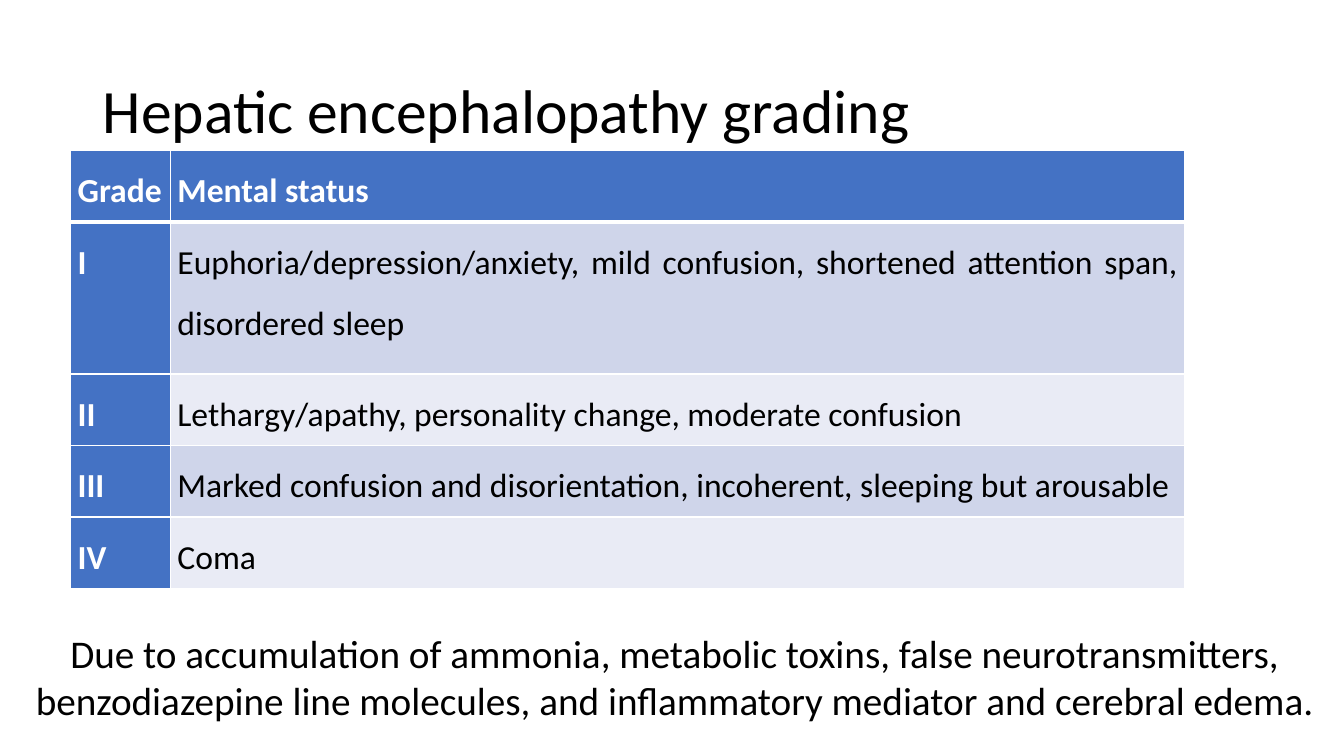
from pptx import Presentation
from pptx.dml.color import RGBColor
from pptx.enum.text import MSO_ANCHOR, PP_ALIGN
from pptx.oxml import parse_xml
from pptx.oxml.ns import nsdecls
from pptx.util import Inches, Pt

COLORS = {
    "white": "FFFFFF",
    "black": "000000",
    "header": "4472C4",
    "band_dark": "CFD5EA",
    "band_light": "E9EBF5",
}
GRADES = [
    ("Grade", "Mental status"),
    ("I", "Euphoria/depression/anxiety, mild confusion, shortened attention span, disordered sleep"),
    ("II", "Lethargy/apathy, personality change, moderate confusion"),
    ("III", "Marked confusion and disorientation, incoherent, sleeping but arousable"),
    ("IV", "Coma"),
]


class SlideBuilder:
    """Holds the slide and its style, and adds text and tables."""

    def __init__(self, slide, font="Calibri"):
        self.slide = slide
        self.font = font

    def format(self, p, size, color="black", bold=False, align=PP_ALIGN.LEFT, spacing=1.0):
        p.alignment = align
        p.line_spacing = spacing
        for r in p.runs:
            r.font.name = self.font
            r.font.size = Pt(size)
            r.font.bold = bold
            r.font.color.rgb = RGBColor.from_string(COLORS[color])

    def text(self, text, left, top, width, height, size, anchor=MSO_ANCHOR.TOP, **style):
        box = self.slide.shapes.add_textbox(Inches(left), Inches(top), Inches(width), Inches(height))
        tf = box.text_frame
        tf.word_wrap = True
        tf.vertical_anchor = anchor
        tf.text = text
        self.format(tf.paragraphs[0], size, **style)

    def borders(self, cell, bottom):
        tc_pr = cell._tc.get_or_add_tcPr()
        widths = {"lnL": 1, "lnR": 1, "lnT": 1, "lnB": bottom}
        for i, (tag, width) in enumerate(widths.items()):
            tc_pr.insert(i, parse_xml(
                f'<a:{tag} {nsdecls("a")} w="{Pt(width)}"><a:solidFill>'
                f'<a:srgbClr val="{COLORS["white"]}"/></a:solidFill></a:{tag}>'))

    def cell(self, cell, text, fill, size, heading, bottom):
        cell.margin_left = cell.margin_right = Inches(0.07)
        cell.margin_top = cell.margin_bottom = 0
        cell.fill.solid()
        cell.fill.fore_color.rgb = RGBColor.from_string(COLORS[fill])
        cell.text = text
        p = cell.text_frame.paragraphs[0]
        p.space_after = Pt(8)
        self.format(p, size, "white" if heading else "black", heading, PP_ALIGN.JUSTIFY, 1.5)
        self.borders(cell, bottom)

    def table(self, rows, left, top, widths, heights, size):
        frame = self.slide.shapes.add_table(
            len(rows), len(widths), Inches(left), Inches(top),
            Inches(sum(widths)), Inches(sum(heights)))
        table = frame.table
        table.first_col = True
        for col, width in zip(table.columns, widths):
            col.width = Inches(width)
        for i, (row, height) in enumerate(zip(rows, heights)):
            table.rows[i].height = Inches(height)
            band = "band_dark" if i % 2 else "band_light"
            for j, text in enumerate(row):
                heading = i == 0 or j == 0
                self.cell(table.cell(i, j), text, "header" if heading else band,
                          size, heading, 1 if i else 3)


def main():
    prs = Presentation()
    prs.slide_width = Inches(13.33)
    prs.slide_height = Inches(7.5)
    s = SlideBuilder(prs.slides.add_slide(prs.slide_layouts[6]))
    s.text("Hepatic encephalopathy grading", 0.92, 0.4, 11.5, 1.45, 44,
           anchor=MSO_ANCHOR.MIDDLE, spacing=0.9)
    s.table(GRADES, 0.7, 1.49, [0.99, 10.06], [0.71, 1.51, 0.71, 0.71, 0.71], 24)
    s.text("Due to accumulation of ammonia, metabolic toxins, false neurotransmitters, "
           "benzodiazepine line molecules, and inflammatory mediator and cerebral edema.",
           0.21, 6.19, 12.96, 1.04, 28, align=PP_ALIGN.CENTER)
    prs.save("out.pptx")


if __name__ == "__main__":
    main()
